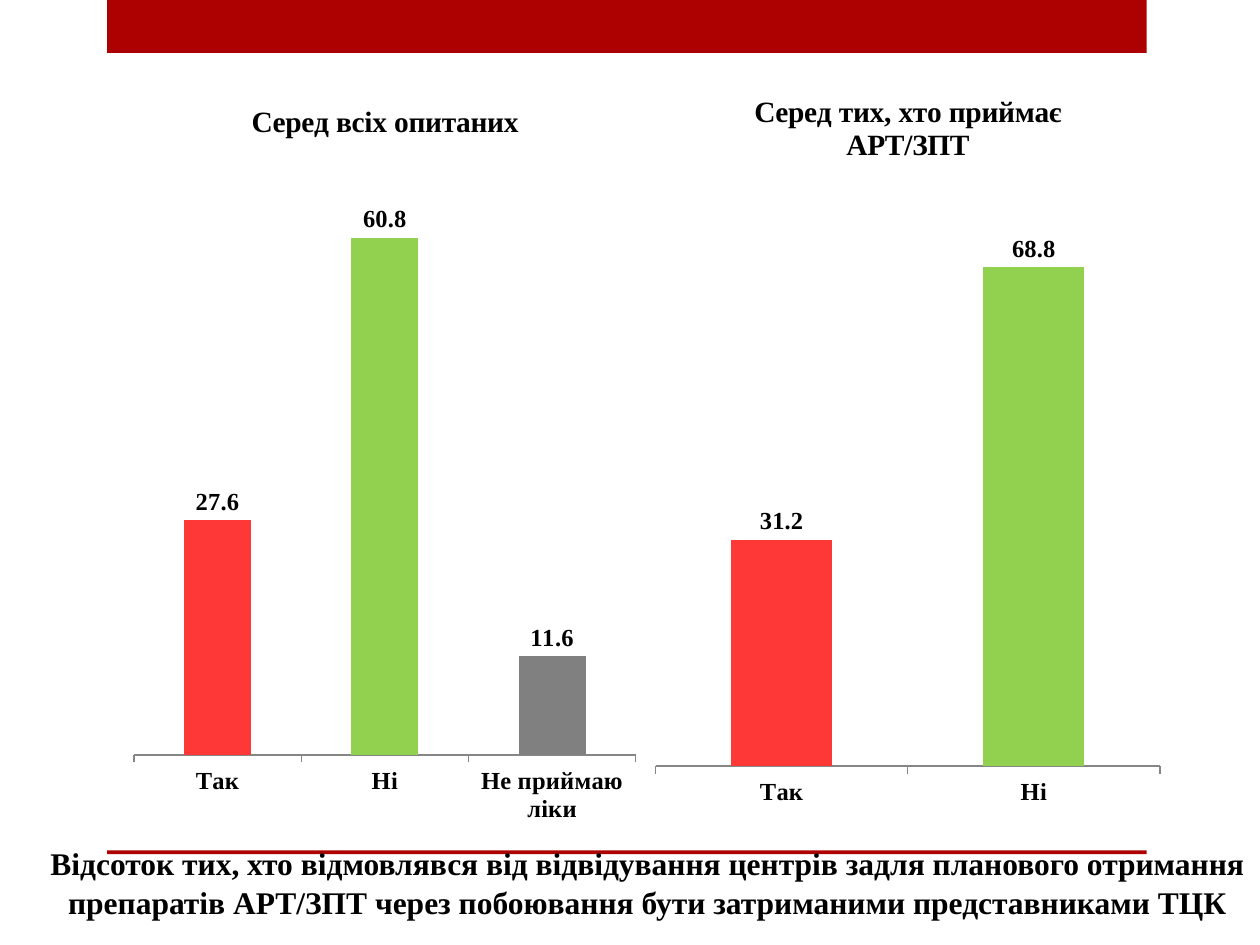
from pptx import Presentation
from pptx.chart.data import CategoryChartData
from pptx.dml.color import RGBColor
from pptx.enum.chart import XL_CHART_TYPE as ChartType, XL_LABEL_POSITION as LabelPos
from pptx.enum.chart import XL_TICK_MARK as Tick
from pptx.enum.shapes import MSO_SHAPE as Shape
from pptx.enum.text import MSO_ANCHOR as Anchor, MSO_AUTO_SIZE as AutoSize, PP_ALIGN as Align
from pptx.oxml import parse_xml
from pptx.oxml.ns import nsdecls
from pptx.util import Inches, Pt


def color(hex_value):
    return RGBColor.from_string(hex_value)


class SurveySlide:
    FONT = "Times New Roman"
    TEXT, ACCENT, AXIS = "000000", "AD0101", "868686"
    ANSWERS = ("FE3737", "92D050", "808080")  # yes, no, no medication

    def __init__(self, prs):
        self.slide = prs.slides.add_slide(prs.slide_layouts[5])

    def style(self, font, size):
        font.name, font.size, font.bold = self.FONT, Pt(size), True
        font.color.rgb = color(self.TEXT)

    def band(self, top, height):
        bar = self.slide.shapes.add_shape(
            Shape.RECTANGLE, Inches(0.85), Inches(top), Inches(8.25), Inches(height))
        bar.shadow.inherit = False
        bar.fill.solid()
        bar.fill.fore_color.rgb = color(self.ACCENT)
        bar.line.fill.background()

    def title(self, text, left, top, width, height):
        heading = self.slide.shapes.title
        heading.left, heading.top = Inches(left), Inches(top)
        heading.width, heading.height = Inches(width), Inches(height)
        frame = heading.text_frame
        frame.text = text
        frame.word_wrap, frame.auto_size = True, AutoSize.NONE
        frame.vertical_anchor = Anchor.BOTTOM
        paragraph = frame.paragraphs[0]
        paragraph.alignment, paragraph.line_spacing = Align.CENTER, 1.05
        self.style(paragraph.font, 18)
        # Bring the heading in front of the bands
        heading.element.getparent().append(heading.element)

    def column_chart(self, title, shares, box, number_format, top_value, plot):
        data = CategoryChartData(number_format=number_format)
        data.categories = list(shares)
        data.add_series("Series 1", list(shares.values()))
        chart = self.slide.shapes.add_chart(
            ChartType.COLUMN_CLUSTERED, *map(Inches, box), data).chart
        self.style(chart.font, 14)
        chart.has_legend = False
        chart.chart_title.text_frame.text = title
        chart.chart_title.include_in_layout = False
        self.style(chart.chart_title.text_frame.paragraphs[0].font, 16.8)

        # Axes
        values, answers = chart.value_axis, chart.category_axis
        values.visible = values.has_major_gridlines = False
        values.minimum_scale, values.maximum_scale = 0, top_value
        answers.major_tick_mark = Tick.OUTSIDE
        answers.format.line.color.rgb = color(self.AXIS)

        # Columns and their labels
        columns = chart.plots[0]
        columns.gap_width, columns.vary_by_categories = 150, False
        series = columns.series[0]
        for index, fill in enumerate(self.ANSWERS[:len(shares)]):
            target = series.points[index] if index else series
            target.format.fill.solid()
            target.format.fill.fore_color.rgb = color(fill)
        labels = series.data_labels
        labels.show_value, labels.position = True, LabelPos.OUTSIDE_END
        labels.number_format, labels.number_format_is_linked = number_format, False
        self.style(labels.font, 14)

        # Fixed plot area, as fractions of the chart
        area = chart.element.chart.plotArea
        for old in area.findall("{*}layout"):
            area.remove(old)
        sizes = "".join(f'<c:{key} val="{value}"/>' for key, value in zip("xywh", plot))
        area.insert(0, parse_xml(
            f'<c:layout {nsdecls("c")}><c:manualLayout><c:layoutTarget val="inner"/>'
            f'<c:xMode val="edge"/><c:yMode val="edge"/>{sizes}'
            '</c:manualLayout></c:layout>'))


def main():
    prs = Presentation()
    prs.slide_width, prs.slide_height = Inches(10), Inches(7.5)
    survey = SurveySlide(prs)

    # Red frame and heading
    survey.band(0, 0.42)
    survey.band(6.75, 0.03)
    survey.title("Відсоток тих, хто відмовлявся від відвідування центрів задля планового "
                 "отримання препаратів АРТ/ЗПТ через побоювання бути затриманими "
                 "представниками ТЦК", 0.28, 6.66, 9.72, 0.7)

    # All respondents, then those in treatment
    survey.column_chart("Серед всіх опитаних",
                        {"Так": 27.6, "Ні": 60.8, "Не приймаю ліки": 11.6},
                        (0.98, 0.6, 4.15, 6.06), "###0.0", 70, (0.02, 0.11, 0.96, 0.78))
    survey.column_chart("Серед тих, хто приймає АРТ/ЗПТ",
                        {"Так": 31.2, "Ні": 68.8},
                        (5.12, 0.52, 4.17, 5.98), "0.0", 80, (0.02, 0.16, 0.96, 0.77))
    prs.save("out.pptx")


if __name__ == "__main__":
    main()
